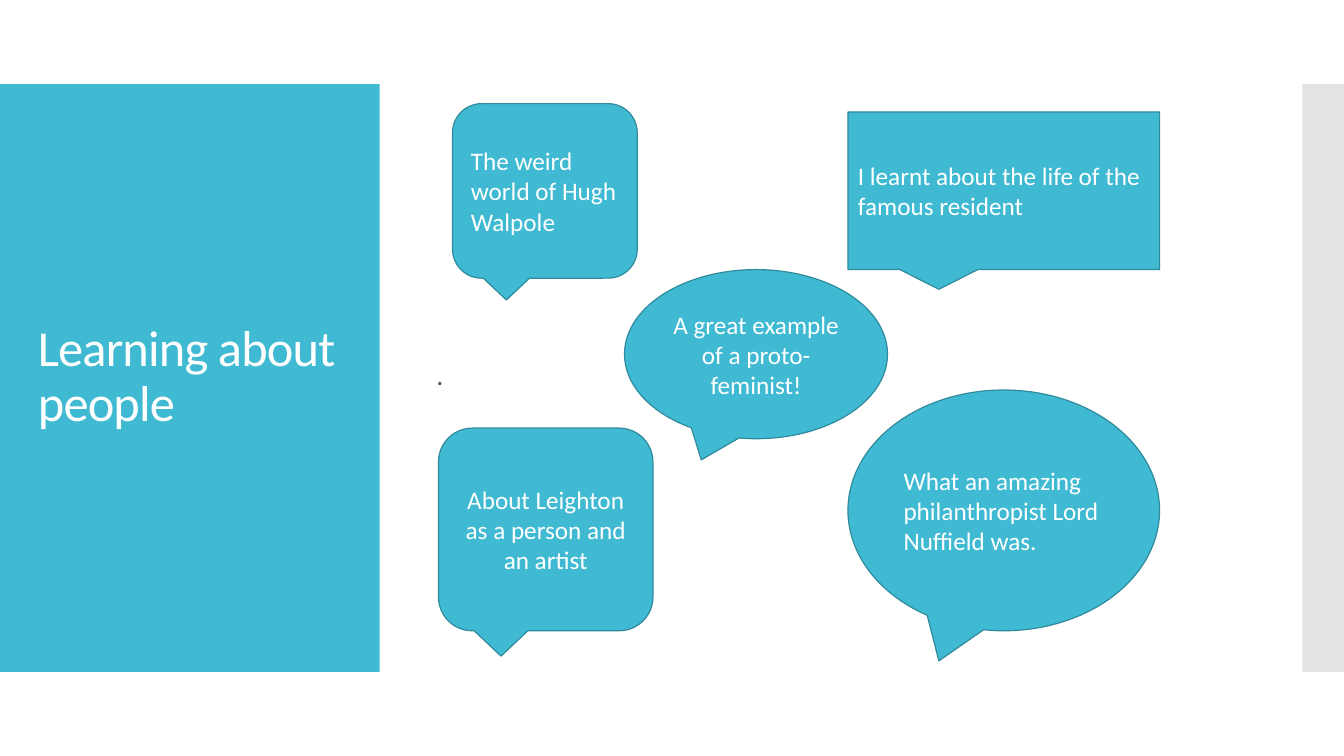
import pptx
import pptx.util
import pptx.oxml.ns
import lxml.etree
from pptx.dml.color import RGBColor
from pptx.enum.shapes import MSO_SHAPE
from pptx.enum.text import MSO_ANCHOR, PP_ALIGN

Pt = pptx.util.Pt
TEAL = RGBColor(0x40, 0xBA, 0xD2)
EDGE = RGBColor(0x2F, 0x8A, 0x9B)
GREY = RGBColor(0xC8, 0xC8, 0xC8)
DARK = RGBColor(0x59, 0x59, 0x59)
WHITE = RGBColor(0xFF, 0xFF, 0xFF)
LEFT, MID = PP_ALIGN.LEFT, PP_ALIGN.CENTER

# kind, left, top, width, height, text, alignment
CALLS = [
    (MSO_SHAPE.RECTANGULAR_CALLOUT, 605.7, 80, 222.6, 112.6,
     "I learnt about the life of the famous resident", LEFT),
    (MSO_SHAPE.ROUNDED_RECTANGULAR_CALLOUT, 323.2, 74, 132, 124.7,
     "The weird world of Hugh Walpole", LEFT),
    (MSO_SHAPE.OVAL_CALLOUT, 605.7, 278.6, 222.6, 172,
     "What an amazing philanthropist Lord Nuffield was.", LEFT),
    (MSO_SHAPE.ROUNDED_RECTANGULAR_CALLOUT, 313.2, 305.8, 153.2, 144.8,
     "About Leighton as a person and an artist", MID),
    (MSO_SHAPE.OVAL_CALLOUT, 446.1, 192.6, 187.9, 120.8,
     "A great example of a proto-feminist!", MID),
]


def write(shape, text, size=18, color=WHITE, align=LEFT, line=None,
          before=None, track=None):
    """Fill a shape with one paragraph; track is letter spacing in points."""
    frame = shape.text_frame
    frame.word_wrap = True
    frame.vertical_anchor = MSO_ANCHOR.MIDDLE
    para = frame.paragraphs[0]
    para.alignment = align
    if line:
        para.line_spacing = line
    if before:
        para.space_before = Pt(before)
    run = para.add_run()
    run.text = text
    run.font.name = "Calibri"
    run.font.size = Pt(size)
    run.font.color.rgb = color
    if track:
        run.font._element.set("spc", str(round(track * 100)))


def add_form(slide, kind, box, fill, edge=None):
    shape = slide.shapes.add_shape(kind, *map(Pt, box))
    shape.shadow.inherit = False
    shape.fill.solid()
    shape.fill.fore_color.rgb = fill
    if edge is None:
        shape.line.fill.background()
    else:
        shape.line.color.rgb = edge
        shape.line.width = Pt(0.85)
    return shape


def add_label(slide, box, text, **form):
    write(slide.shapes.add_textbox(*map(Pt, box)), text, **form)


def fade(shape, percent):
    """Set the opacity of a solid fill."""
    qn = pptx.oxml.ns.qn
    color = shape._element.spPr.find(qn("a:solidFill"))[0]
    alpha = lxml.etree.SubElement(color, qn("a:alpha"))
    alpha.set("val", str(percent * 1000))


def main():
    deck = pptx.Presentation()
    deck.slide_width, deck.slide_height = Pt(960), Pt(540)
    slide = deck.slides.add_slide(deck.slide_layouts[6])

    add_form(slide, MSO_SHAPE.RECTANGLE, (0, 60, 271.2, 420), TEAL)
    strip = add_form(slide, MSO_SHAPE.RECTANGLE, (930.2, 60, 29.8, 420), GREY)
    fade(strip, 50)

    add_label(slide, (20, 88.6, 232, 362), "Learning about people",
              size=36, line=0.9, track=-0.6)
    add_label(slide, (304.6, 67.7, 576, 403), ".",
              size=20, color=DARK, line=0.9, before=12)

    for kind, *box, text, align in CALLS:
        call = add_form(slide, kind, box, TEAL, EDGE)
        write(call, text, align=align)

    deck.save("out.pptx")


if __name__ == "__main__":
    main()
